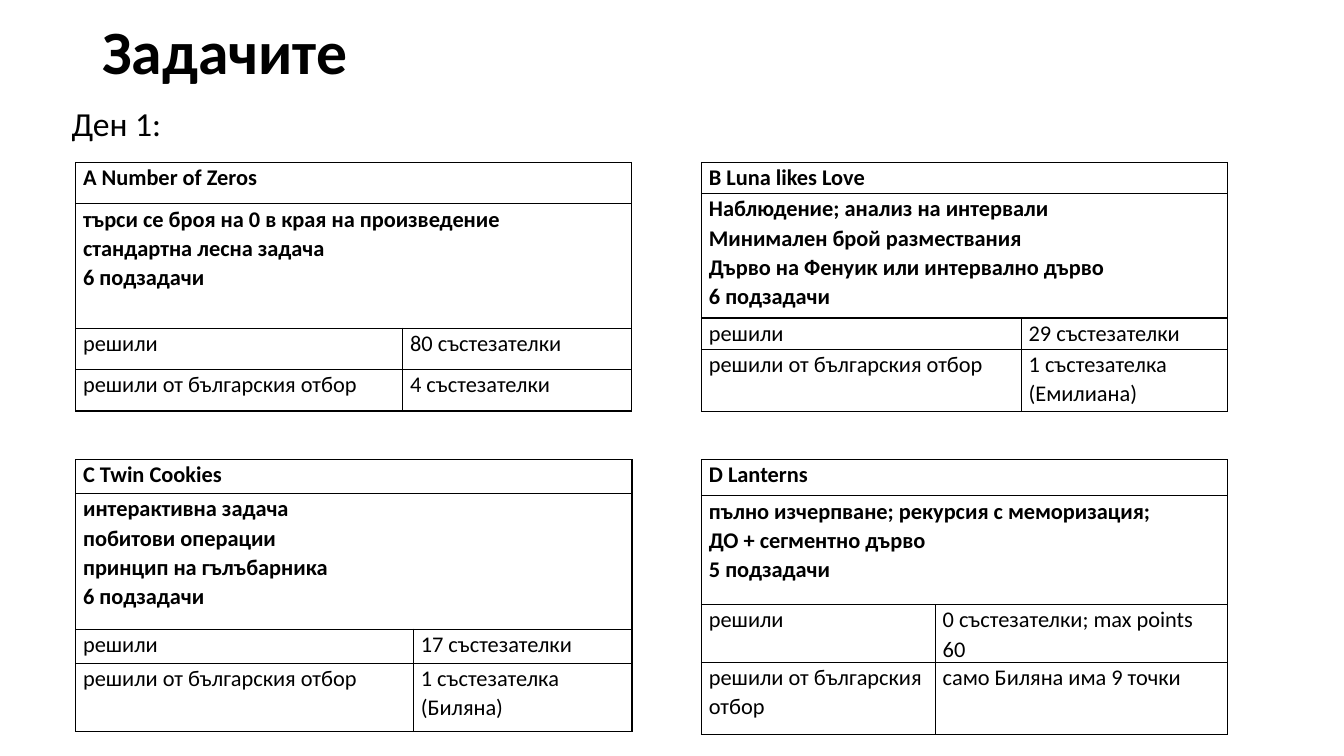
from lxml import etree
from pptx import Presentation
from pptx.dml.color import RGBColor
from pptx.enum.text import MSO_ANCHOR
from pptx.oxml.ns import qn
from pptx.util import Pt

MIDDLE = MSO_ANCHOR.MIDDLE
TOP = MSO_ANCHOR.TOP

COLORS = {"ink": "000000"}
FONT = "Calibri"
TITLE = "Задачите"
DAY = "Ден 1:"
SOLVED = "решили"
SOLVED_BY_TEAM = "решили от българския отбор"

PROBLEMS = [
    {
        "name": "А Number of Zeros",
        "notes": ["търси се броя на 0 в края на произведение",
                  "стандартна лесна задача", "6 подзадачи"],
        "solved": "80 състезателки", "team": "4 състезателки",
        "team_lines": 1, "line_height": 29.6, "label_width": 233.6,
    },
    {
        "name": "B Luna likes Love",
        "notes": ["Наблюдение; анализ на интервали",
                  "Минимален брой размествания",
                  "Дърво на Фенуик или интервално дърво", "6 подзадачи"],
        "solved": "29 състезателки", "team": "1 състезателка (Емилиана)",
        "team_lines": 2, "line_height": 22.25, "label_width": 228.4,
    },
    {
        "name": "C Twin Cookies",
        "notes": ["интерактивна задача", "побитови операции",
                  "принцип на гълъбарника", "6 подзадачи"],
        "solved": "17 състезателки", "team": "1 състезателка (Биляна)",
        "team_lines": 2, "line_height": 24.25, "label_width": 241.2,
    },
    {
        "name": "D Lanterns",
        "notes": ["пълно изчерпване; рекурсия с меморизация;",
                  "ДО + сегментно дърво", "5 подзадачи"],
        "solved": "0 състезателки; max points 60",
        "team": "само Биляна има 9 точки",
        "team_lines": 2, "line_height": 25.9, "label_width": 167,
    },
]
COLUMN_LEFTS = (54, 501)
COLUMN_WIDTHS = (397.4, 375.8)
ROW_TOPS = (116, 328.3)


def style(paragraph, size, bold, spacing):
    font = paragraph.font
    font.name, font.size, font.bold = FONT, Pt(size), bold
    font.color.rgb = RGBColor.from_string(COLORS["ink"])
    paragraph.line_spacing = spacing


def add_heading(slide, box, text, size, bold, spacing, anchor):
    frame = slide.shapes.add_textbox(*map(Pt, box)).text_frame
    frame.word_wrap = True
    frame.vertical_anchor = anchor
    frame.text = text
    style(frame.paragraphs[0], size, bold, spacing)


def add_borders(cell):
    properties = cell._tc.get_or_add_tcPr()
    for position, side in enumerate(("lnL", "lnR", "lnT", "lnB")):
        border = etree.Element(qn(f"a:{side}"), w=str(Pt(1)))
        fill = etree.SubElement(border, qn("a:solidFill"))
        etree.SubElement(fill, qn("a:srgbClr"), val=COLORS["ink"])
        properties.insert(position, border)


def fill_cell(cell, lines, bold):
    cell.margin_left = cell.margin_right = Pt(5.4)
    cell.margin_top = cell.margin_bottom = Pt(0)
    cell.text = "\n".join(lines)
    for paragraph in cell.text_frame.paragraphs:
        style(paragraph, 16, bold, 1.07)


def add_problem(slide, problem, left, top, width):
    line_counts = (1, len(problem["notes"]), 1, problem["team_lines"])
    heights = [count * problem["line_height"] for count in line_counts]
    table = slide.shapes.add_table(
        4, 2, Pt(left), Pt(top), Pt(width), Pt(sum(heights))).table
    table.first_row = table.horz_banding = False
    table.columns[0].width = Pt(problem["label_width"])
    table.columns[1].width = Pt(width - problem["label_width"])
    for row, height in zip(table.rows, heights):
        row.height = Pt(height)
    for cell in table.iter_cells():
        cell.fill.background()
        add_borders(cell)
    for row, lines in enumerate(([problem["name"]], problem["notes"])):
        table.cell(row, 0).merge(table.cell(row, 1))
        fill_cell(table.cell(row, 0), lines, True)
    results = ((SOLVED, problem["solved"]), (SOLVED_BY_TEAM, problem["team"]))
    for row, texts in enumerate(results, start=2):
        for column, text in enumerate(texts):
            fill_cell(table.cell(row, column), [text], False)


def main():
    """Build the slide with the four problems of day one."""
    deck = Presentation()
    deck.slide_width, deck.slide_height = Pt(960), Pt(540)
    slide = deck.slides.add_slide(deck.slide_layouts[6])
    add_heading(slide, (66, 8.6, 828, 61.2), TITLE, 44, True, 0.9, MIDDLE)
    add_heading(slide, (44, 70, 749.5, 36), DAY, 24, False, 1.0, TOP)
    for index, problem in enumerate(PROBLEMS):
        row, column = divmod(index, 2)
        add_problem(slide, problem, COLUMN_LEFTS[column], ROW_TOPS[row],
                    COLUMN_WIDTHS[column])
    deck.save("out.pptx")


if __name__ == "__main__":
    main()
